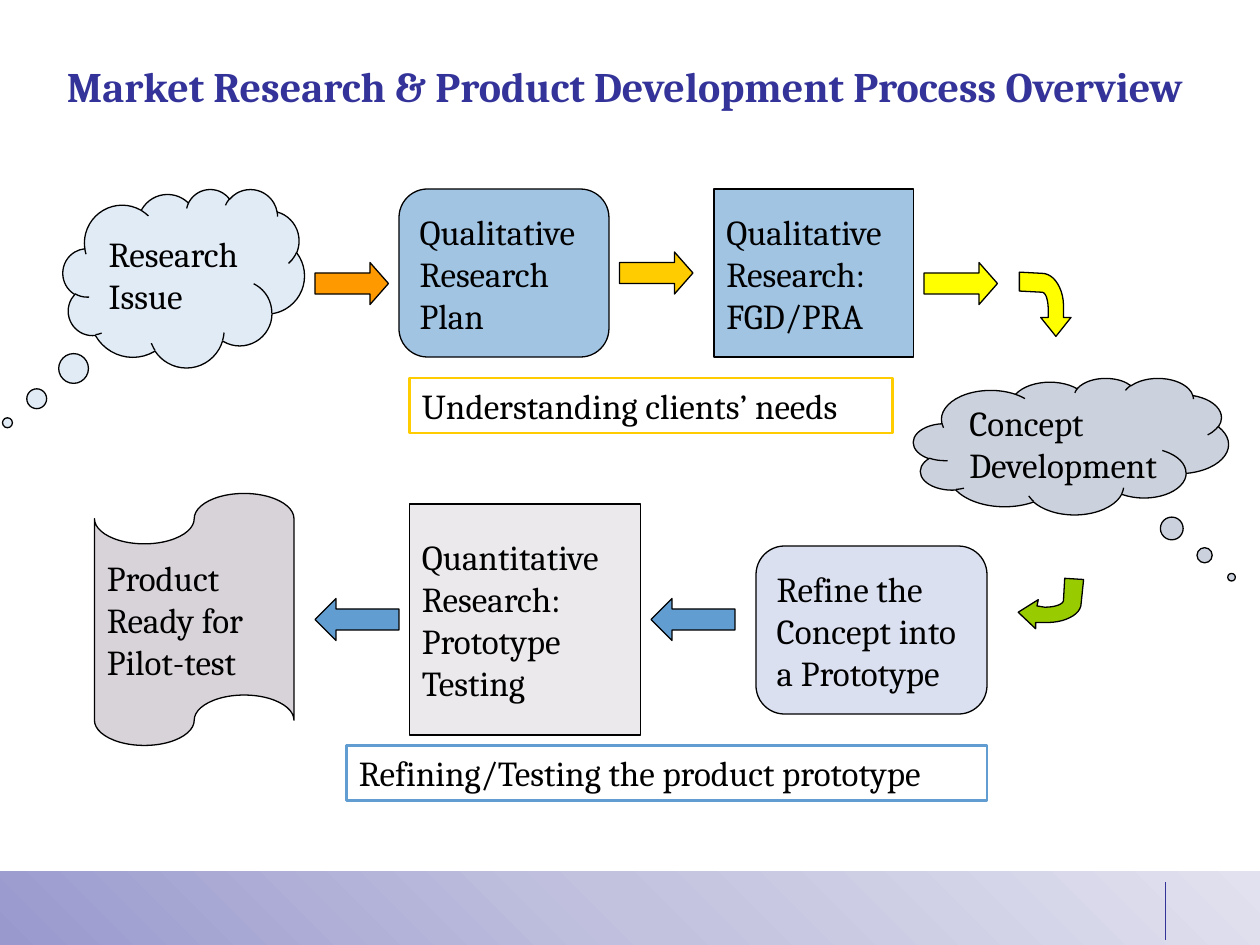
from copy import deepcopy

from lxml import etree
from pptx import Presentation
from pptx.dml.color import RGBColor
from pptx.enum.shapes import MSO_CONNECTOR, MSO_SHAPE
from pptx.enum.text import MSO_ANCHOR, MSO_AUTO_SIZE, PP_ALIGN
from pptx.oxml.ns import qn
from pptx.util import Pt

RECT, ROUND = MSO_SHAPE.RECTANGLE, MSO_SHAPE.ROUNDED_RECTANGLE
PROCESS, TAPE = MSO_SHAPE.FLOWCHART_PROCESS, MSO_SHAPE.FLOWCHART_PUNCHED_TAPE
CLOUD = MSO_SHAPE.CLOUD_CALLOUT
RIGHT, LEFT = MSO_SHAPE.RIGHT_ARROW, MSO_SHAPE.LEFT_ARROW
STRAIGHT = MSO_CONNECTOR.STRAIGHT
CENTER, ALIGN_LEFT = PP_ALIGN.CENTER, PP_ALIGN.LEFT
TOP, MIDDLE = MSO_ANCHOR.TOP, MSO_ANCHOR.MIDDLE
NO_FIT = MSO_AUTO_SIZE.NONE

THEME = {
    "font": "Cambria", "title": 24, "body": 20,
    "navy": "333399", "black": "000000",
    "orange": "FF9900", "gold": "FFCC00", "yellow": "FFFF00",
    "green": "99CC00", "blue": "629DD1", "sky": "A1C4E3",
    "ice": "E0EBF6", "slate": "CCD2DD", "lavender": "DAE0EF",
    "mist": "EBE9EC", "mauve": "D8D3D9",
    "band": ("9999CE", "C2C2DF", "E1E1EF"),
}


def paint(sp, fill, line="black", width=0.75):
    """Set fill and outline from theme colours, without a shadow."""
    sp.shadow.inherit = False
    if fill:
        sp.fill.solid()
        sp.fill.fore_color.rgb = RGBColor.from_string(THEME[fill])
    else:
        sp.fill.background()
    sp.line.color.rgb = RGBColor.from_string(THEME[line])
    sp.line.width = Pt(width)


def write(p, text, size="body", color="black", align=ALIGN_LEFT, **style):
    """Add one formatted run to a paragraph."""
    p.alignment = align
    r = p.add_run()
    r.text = text
    r.font.color.rgb = RGBColor.from_string(THEME[color])
    style.update(name=THEME["font"], size=Pt(THEME[size]))
    for key, value in style.items():
        setattr(r.font, key, value)


prs = Presentation()
prs.slide_width, prs.slide_height = Pt(720), Pt(540)
s = prs.slides.add_slide(prs.slide_layouts[5])

# Footer band and rule
band = s.shapes.add_shape(RECT, Pt(0), Pt(498), Pt(720), Pt(42))
band.shadow.inherit = False
band.line.fill.background()
band.fill.gradient()
band.fill.gradient_angle = 45
stops = band._element.spPr.find(".//" + qn("a:gsLst"))
stops.insert(1, deepcopy(stops[0]))
for stop, position, color in zip(band.fill.gradient_stops, (0, 0.5, 1), THEME["band"]):
    stop.position = position
    stop.color.rgb = RGBColor.from_string(color)
rule = s.shapes.add_connector(STRAIGHT, Pt(666), Pt(504), Pt(666), Pt(537))
rule.line.color.rgb = RGBColor.from_string(THEME["navy"])
rule.line.width = Pt(0.75)
etree.SubElement(rule._element.spPr, qn("a:effectLst"))

# Title
title = s.shapes.title
title.left, title.top, title.width, title.height = Pt(12), Pt(2), Pt(690), Pt(94)
tf = title.text_frame
tf.auto_size, tf.vertical_anchor = NO_FIT, MIDDLE
write(tf.paragraphs[0], "Market Research & Product Development Process Overview",
      "title", "navy", CENTER, bold=True)

# Straight arrows: kind, left, top, width, fill
for kind, x, y, w, fill in (
    (RIGHT, 180, 150, 42, "orange"),
    (RIGHT, 354, 144, 42, "gold"),
    (RIGHT, 528, 150, 42, "yellow"),
    (LEFT, 372, 342, 48, "blue"),
    (LEFT, 180, 342, 48, "blue"),
):
    sp = s.shapes.add_shape(kind, Pt(x), Pt(y), Pt(w), Pt(24))
    sp.adjustments[1] = 0.44 if kind == RIGHT else 0.5
    paint(sp, fill)

# Curved arrows: pairs are corners, sixes are Bezier curves
UNITS, STEPS = 100, 12
for fill, outline in (
    ("yellow", [(603.4, 192.2), (612, 181.4), (607.7, 181.4), (607.7, 177.1),
                (608.4, 165.6, 602.6, 156.2, 595.4, 156.2),
                (582.5, 155.5), (582.5, 166.3), (595.4, 167),
                (597.6, 167, 599, 171.4, 599, 177.1),
                (599, 181.4), (594.7, 181.4)]),
    ("green", [(581.8, 349.9), (591.8, 359.3), (591.8, 355.7), (596.2, 355.7),
               (607.7, 356.4, 617.8, 351.4, 617.8, 344.9),
               (619.2, 331.2), (608.4, 330.5), (607.7, 343.4),
               (607, 345.6, 602.6, 347, 596.9, 347),
               (592.6, 346.3), (593.3, 342.7)]),
):
    points = [outline[0]]
    for part in outline[1:]:
        if len(part) == 2:
            points.append(part)
            continue
        controls = [points[-1], part[:2], part[2:4], part[4:]]
        for step in range(1, STEPS + 1):
            t = step / STEPS
            weights = ((1 - t) ** 3, 3 * t * (1 - t) ** 2, 3 * t * t * (1 - t), t ** 3)
            points.append(tuple(sum(k * c[axis] for k, c in zip(weights, controls))
                                for axis in (0, 1)))
    points = [(x * UNITS, y * UNITS) for x, y in points]
    builder = s.shapes.build_freeform(*points[0], scale=Pt(1) / UNITS)
    builder.add_line_segments(points[1:], close=True)
    paint(builder.convert_to_shape(), fill)

# Process steps: kind, box, fill, adjustments, lines
for kind, box, fill, adjustments, lines in (
    (CLOUD, (522, 216, 180, 78), "slate", (0.51, 0.96), ("Concept", "Development")),
    (ROUND, (228, 108, 120, 96), "sky", (0.17,), ("Qualitative", "Research", "Plan")),
    (PROCESS, (408, 108, 114, 96), "sky", (), ("Qualitative", "Research:", "FGD/PRA")),
    (ROUND, (432, 312, 132, 96), "lavender", (0.17,),
     ("Refine the", "Concept into", "a Prototype")),
    (CLOUD, (36, 108, 138, 102), "ice", (-0.73, 0.81), ("Research", "Issue")),
    (PROCESS, (234, 288, 132, 132), "mist", (),
     ("Quantitative", "Research:", "Prototype", "Testing")),
    (TAPE, (54, 282, 114, 144), "mauve", (), ("Product", "Ready for", "Pilot-test")),
):
    sp = s.shapes.add_shape(kind, *map(Pt, box))
    for i, value in enumerate(adjustments):
        sp.adjustments[i] = value
    paint(sp, fill)
    tf = sp.text_frame
    tf.word_wrap, tf.vertical_anchor = False, MIDDLE
    for i, line in enumerate(lines):
        write(tf.add_paragraph() if i else tf.paragraphs[0], line)

# Phase labels
for box, color, text in (
    ((234, 216, 276, 31.5), "gold", "Understanding clients’ needs"),
    ((198, 426, 366, 31.5), "blue", "Refining/Testing the product prototype"),
):
    sp = s.shapes.add_shape(RECT, *map(Pt, box))
    paint(sp, None, color, 1.5)
    tf = sp.text_frame
    tf.word_wrap, tf.vertical_anchor = True, TOP
    write(tf.paragraphs[0], text)

prs.save("out.pptx")
